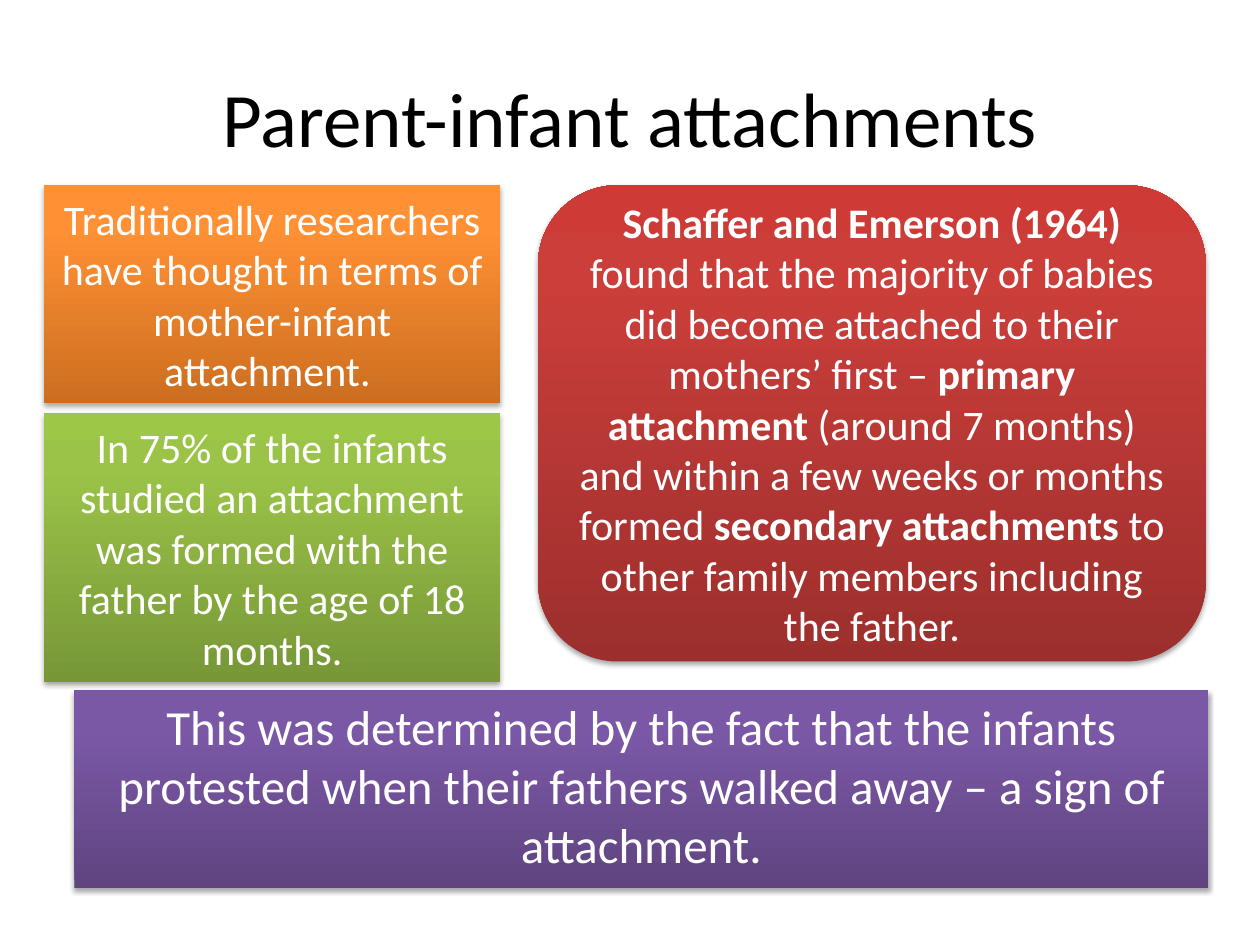
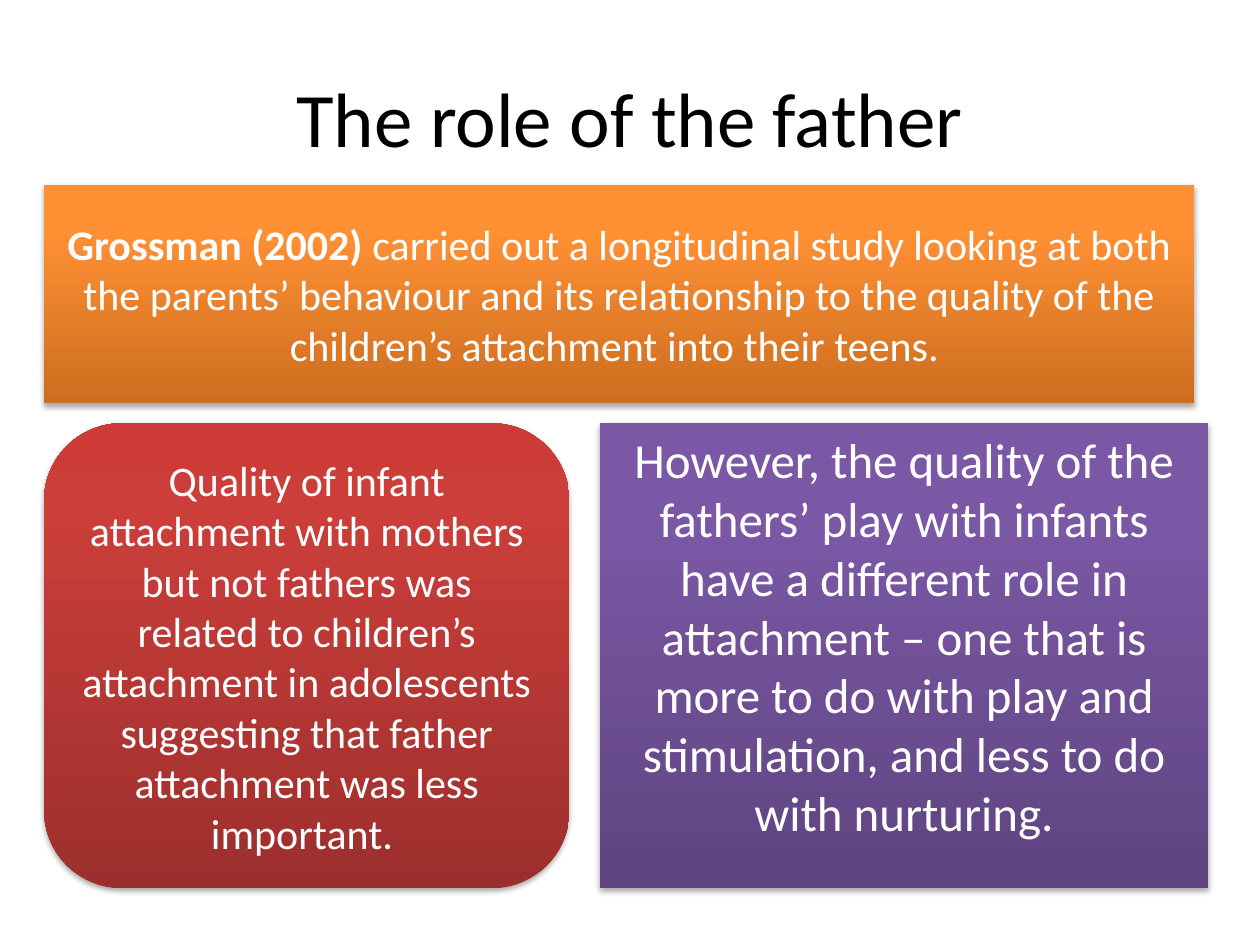
import pptx
import pptx.dml.color
import pptx.enum.shapes
import pptx.enum.text
import pptx.oxml
import pptx.oxml.ns
import pptx.util
from collections import namedtuple

Box = namedtuple("Box", "left top width height")

# Shared style: the grid has 100 columns and 75 rows of square cells
COLUMNS, ROWS = 100, 75
CELL = pptx.util.Inches(0.1)
TITLE = Box(5, 3, 90, 12.5)
BODY = Box(3.5, 14.7, 92.4, 55.8)
TOP_ROWS = 17.3
FONT = "Calibri"
COLOURS = {"title": "000000", "text": "FFFFFF", "shadow": "000000"}
# Gradients run from the bottom edge to the top edge
STOPS = (0, 80, 100)
GRADIENTS = {
    "orange": ("CC6E20", "FF9034", "FF9136"),
    "green": ("779737", "9BC348", "9DC746"),
    "red": ("9C2F2D", "CB3E3A", "CE3B37"),
    "purple": ("5F4480", "7B58A6", "7C57A8"),
}
RECTANGLE = pptx.enum.shapes.MSO_SHAPE.RECTANGLE
ROUNDED = pptx.enum.shapes.MSO_SHAPE.ROUNDED_RECTANGLE
MIDDLE = pptx.enum.text.MSO_ANCHOR.MIDDLE
TOP = pptx.enum.text.MSO_ANCHOR.TOP


def to_lengths(box):
    return [round(value * CELL) for value in box]


def within(region, left, top, width, height):
    """Turn a box measured from the region's corner into a slide box."""
    return Box(region.left + left, region.top + top, width, height)


def add_xml(parent, xml):
    namespace = pptx.oxml.ns.nsdecls("a")
    parent.append(pptx.oxml.parse_xml(xml.replace(" ", f" {namespace} ", 1)))


def write(shape, text, size, colour, anchor):
    """Write one centred paragraph; parts between ** are bold."""
    frame = shape.text_frame
    frame.word_wrap = True
    frame.vertical_anchor = anchor
    para = frame.paragraphs[0]
    para.alignment = pptx.enum.text.PP_ALIGN.CENTER
    for index, part in enumerate(text.split("**")):
        if part:
            span = para.add_run()
            span.text = part
            span.font.name = FONT
            span.font.size = pptx.util.Pt(size)
            span.font.bold = index % 2 == 1
            span.font.color.rgb = pptx.dml.color.RGBColor.from_string(COLOURS[colour])
    return para


def paint(shape, gradient):
    """Give the shape its three-stop gradient and soft shadow, without outline."""
    shape.fill.gradient()
    shape.fill.gradient_angle = 90
    properties = shape.fill._xPr
    stop_list = properties.find(".//" + pptx.oxml.ns.qn("a:gsLst"))
    for stop in list(stop_list):
        stop_list.remove(stop)
    for position, colour in zip(STOPS, GRADIENTS[gradient]):
        add_xml(stop_list, f'<a:gs pos="{position * 1000}"><a:srgbClr val="{colour}"/></a:gs>')
    shape.line.fill.background()
    shape.shadow.inherit = False
    add_xml(properties.find(pptx.oxml.ns.qn("a:effectLst")),
            '<a:outerShdw blurRad="40000" dist="23000" dir="5400000" rotWithShape="0">'
            f'<a:srgbClr val="{COLOURS["shadow"]}"><a:alpha val="35000"/></a:srgbClr>'
            '</a:outerShdw>')


def add_card(page, box, gradient, text, form=RECTANGLE, size=24, anchor=MIDDLE):
    card = page.shapes.add_shape(form, *to_lengths(box))
    paint(card, gradient)
    return write(card, text, size, "text", anchor)


def add_conclusion(page, box, text):
    para = add_card(page, box, "purple", text, size=28, anchor=TOP)
    para.space_before = pptx.util.Pt(5.6)


def add_page(deck, title):
    page = deck.slides.add_slide(deck.slide_layouts[6])
    write(page.shapes.add_textbox(*to_lengths(TITLE)), title, 44, "title", MIDDLE)
    return page


def build_attachments(deck, region):
    page = add_page(deck, "Parent-infant attachments")
    left_columns, gutter, gap = 36.2, 3, 0.8
    right_start = left_columns + gutter
    # Conclusion across the bottom
    add_conclusion(page, within(region, 2.4, region.height - 15.7, region.width - 2.4, 15.7),
                   "This was determined by the fact that the infants protested when their "
                   "fathers walked away – a sign of attachment.")
    # Left column: two stacked cards
    add_card(page, within(region, 0, 0, left_columns, TOP_ROWS), "orange",
             "Traditionally researchers have thought in terms of mother-infant attachment. ")
    add_card(page, within(region, 0, TOP_ROWS + gap, left_columns, 21.3), "green",
             "In 75% of the infants studied an attachment was formed with the father "
             "by the age of 18 months.")
    # Right column: the study
    add_card(page, within(region, right_start, 0, region.width - right_start - 0.2, 37.8), "red",
             "**Schaffer and Emerson (1964)** found that the majority of babies did become "
             "attached to their mothers’ first – **primary attachment** (around 7 months) "
             "and within a few weeks or months formed **secondary attachments** to other "
             "family members including the father.", ROUNDED)


def build_father(deck, region):
    page = add_page(deck, "The role of the father")
    left_columns, gutter, gap = 41.7, 2.4, 1.6
    right_start = left_columns + gutter
    lower_start = TOP_ROWS + gap
    lower_rows = region.height - lower_start
    # Conclusion on the lower right
    add_conclusion(page, within(region, right_start, lower_start,
                                region.width - right_start, lower_rows),
                   "However, the quality of the fathers’ play with infants have a different "
                   "role in attachment – one that is more to do with play and stimulation, "
                   "and less to do with nurturing.")
    # Study across the top
    add_card(page, within(region, 0, 0, region.width - 1.1, TOP_ROWS), "orange",
             "**Grossman (2002)** carried out a longitudinal study looking at both the "
             "parents’ behaviour and its relationship to the quality of the children’s "
             "attachment into their teens. ")
    # Finding on the lower left
    add_card(page, within(region, 0, lower_start, left_columns, lower_rows), "red",
             "Quality of infant attachment with mothers but not fathers was related to "
             "children’s attachment in adolescents suggesting that father attachment was "
             "less important. ", ROUNDED)


def main():
    deck = pptx.Presentation()
    deck.slide_width = COLUMNS * CELL
    deck.slide_height = ROWS * CELL
    build_attachments(deck, BODY)
    build_father(deck, BODY)
    deck.save("out.pptx")


if __name__ == "__main__":
    main()
